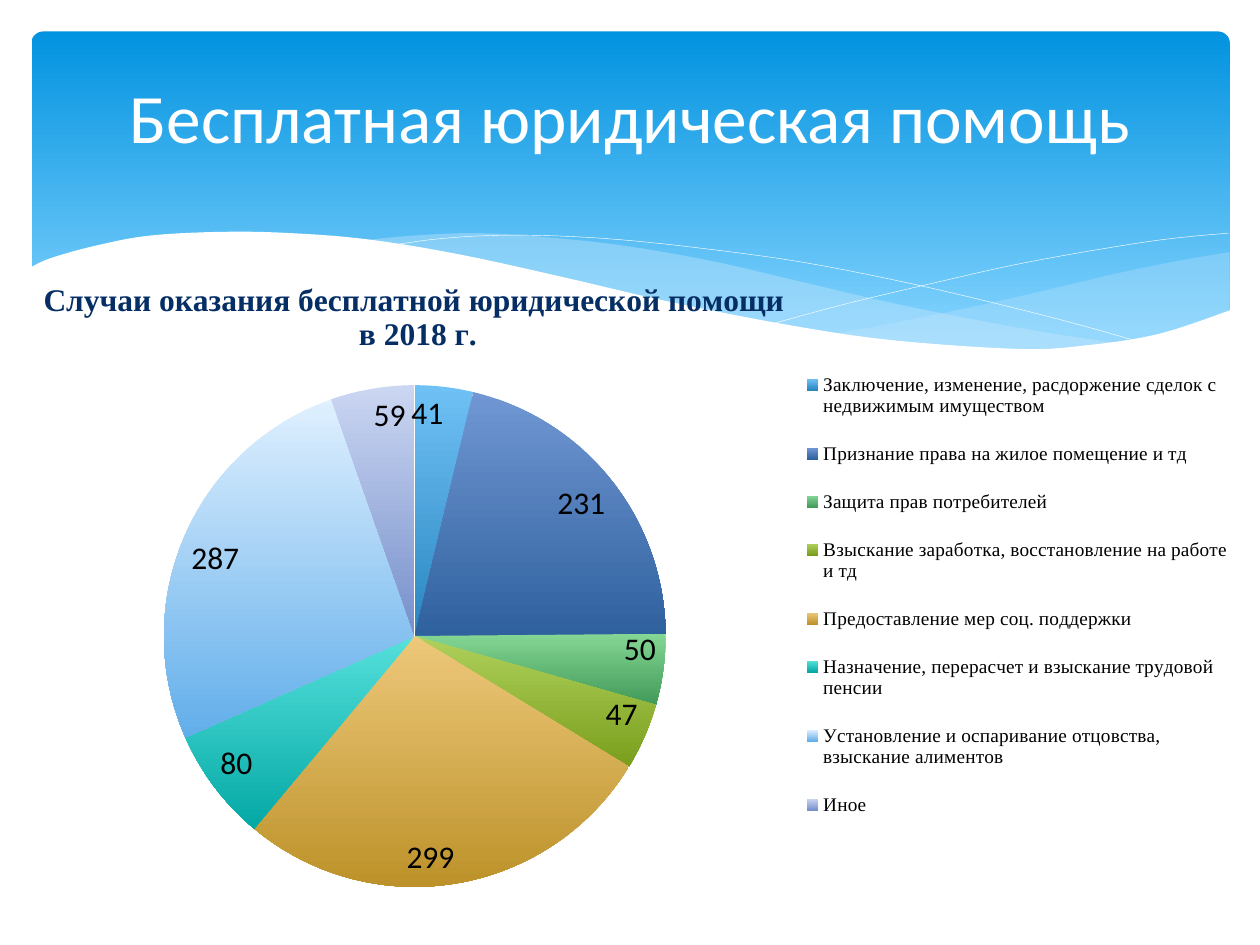
from lxml import etree
from pptx import Presentation
from pptx import util as u
from pptx.chart.data import CategoryChartData
from pptx.dml.color import RGBColor
from pptx.enum import chart as ch, shapes, text
from pptx.oxml import ns

TITLE = "Бесплатная юридическая помощь"
CHART_TITLE = ["Случаи оказания бесплатной юридической помощи ", "в 2018 г."]
# category, number of cases, top and bottom colour of the slice
CASES = [
    ("Заключение, изменение, расдоржение сделок с недвижимым имуществом", 41, "6FC1F5", "2A86C0"),
    ("Признание права на жилое помещение и тд", 231, "7097D3", "2F619E"),
    ("Защита прав потребителей", 50, "84D694", "429A59"),
    ("Взыскание заработка, восстановление на работе и тд", 47, "AFD15C", "7A9E1C"),
    ("Предоставление мер соц. поддержки", 299, "EDC87A", "BD922A"),
    ("Назначение, перерасчет и взыскание трудовой пенсии", 80, "55E0DB", "04A8A5"),
    ("Установление и оспаривание отцовства, взыскание алиментов", 287, "DFF0FF", "62AEEA"),
    ("Иное", 59, "CBD6F2", "7690CB"),
]

# Curve knots in inches from the corner of the wave box
RIGHT_WAVE = [
    [(9.53, .16), (9.12, .23), (8.68, .32), (8.38, .39), (7.56, .58), (6.83, .73), (6.38, .81)],
    [(6.38, .81), (6.82, .87), (7.46, .92), (8.01, .93), (8.58, .9), (9.05, .79), (9.53, .63)],
]
MIDDLE_WAVE = [
    [(8.7, .89), (8.14, .81), (7.52, .7), (6.83, .56), (6.06, .38), (5.46, .24), (4.79, .12),
     (4.19, .05), (3.57, .01), (3.05, .03), (2.63, .07)],
    [(2.63, .07), (3.19, .15), (3.81, .27), (4.26, .38), (5.07, .56), (5.78, .71), (6.42, .82),
     (6.99, .9), (7.5, .93), (8.05, .94), (8.44, .92), (8.7, .89)],
]
FALLING_LINE = [[(2.86, .11), (3.21, .06), (3.64, .03), (4.1, .03), (4.66, .06), (5.33, .13),
                 (6.13, .24), (7.04, .42), (8.08, .67), (8.84, .88)]]
RISING_LINE = [[(5.9, .73), (6.49, .57), (7.25, .39), (7.83, .26), (8.43, .15), (9.01, .06),
                (9.52, .01)]]
WHITE_WAVE = [
    [(9.54, .62), (8.97, .81), (8.4, .9), (7.86, .93), (6.85, .86), (6.03, .74), (5.06, .55),
     (4.24, .36), (3.42, .18), (2.69, .06), (2.07, .01), (1.54, 0), (.96, .03), (.53, .11),
     (.17, .21), (0, .29)],
    [(0, 1.45), (9.54, 1.45)],
]


def rgb(value):
    return RGBColor.from_string(value)


def fill_gradient(fill, top, bottom, end=1.0):
    fill.gradient()
    fill.gradient_angle = 270
    for stop, color, position in zip(fill.gradient_stops, (top, bottom), (0, end)):
        stop.color.rgb = rgb(color)
        stop.position = position


def set_font(font, name, size, color, bold=False):
    font.name, font.size, font.bold = name, u.Pt(size), bold
    font.color.rgb = rgb(color)


def smooth_curve(knots, steps=5):
    """Points of a Catmull-Rom curve through the knots."""
    if len(knots) < 3:
        return knots
    padded = [knots[0], *knots, knots[-1]]
    points = [knots[0]]
    for a, b, c, d in zip(padded, padded[1:], padded[2:], padded[3:]):
        for i in range(1, steps + 1):
            t = i / steps
            points.append(tuple(
                (2 * q + (r - p) * t + (2 * p - 5 * q + 4 * r - s) * t ** 2
                 + (3 * q - p - 3 * r + s) * t ** 3) / 2
                for p, q, r, s in zip(a, b, c, d)))
    return points


def add_wave(slide, box, edges, fill=None, alpha=100):
    """Filled wave, or a thin white line when no fill is given."""
    points = [(u.Inches(box[0] + x), u.Inches(box[1] + y))
              for edge in edges for x, y in smooth_curve(edge)]
    builder = slide.shapes.build_freeform(*points[0])
    builder.add_line_segments(points[1:], close=fill is not None)
    sp = builder.convert_to_shape()
    sp.shadow.inherit = False
    if fill is None:
        sp.fill.background()
        sp.line.color.rgb = rgb("FFFFFF")
        sp.line.width = u.Pt(0.25)
        return
    sp.line.fill.background()
    sp.fill.solid()
    sp.fill.fore_color.rgb = rgb(fill)
    if alpha < 100:
        color = sp.fill._xPr.find(".//" + ns.qn("a:srgbClr"))
        etree.SubElement(color, ns.qn("a:alpha"), val=str(alpha * 1000))


def add_header(slide, left, top, width, height):
    sp = slide.shapes.add_shape(shapes.MSO_SHAPE.ROUNDED_RECTANGLE,
                                *map(u.Inches, (left, top, width, height)))
    sp.adjustments[0] = 0.034
    sp.shadow.inherit = False
    sp.line.fill.background()
    fill_gradient(sp.fill, "0293E0", "83D3FE", 0.9)

    waves = left - 0.02, top + 1.59
    add_wave(slide, waves, RIGHT_WAVE, "C6E7FC", 29)
    add_wave(slide, waves, MIDDLE_WAVE, "C6E7FC", 40)
    add_wave(slide, waves, FALLING_LINE)
    add_wave(slide, waves, RISING_LINE)
    add_wave(slide, waves, WHITE_WAVE, "FFFFFF")


def set_layout(parent, index, inner=False, **values):
    """Place a chart part by fractions of the chart."""
    for old in parent.findall(ns.qn("c:layout")):
        parent.remove(old)
    layout = etree.Element(ns.qn("c:layout"))
    manual = etree.SubElement(layout, ns.qn("c:manualLayout"))
    settings = {"layoutTarget": "inner"} if inner else {}
    settings.update(xMode="edge", yMode="edge", **values)
    for name, value in settings.items():
        etree.SubElement(manual, ns.qn("c:" + name), val=str(value))
    parent.insert(index, layout)


def add_case_chart(slide, left, top, width, height):
    data = CategoryChartData()
    data.categories = [case[0] for case in CASES]
    data.add_series("Series 1", [case[1] for case in CASES])
    frame = slide.shapes.add_chart(ch.XL_CHART_TYPE.PIE,
                                   *map(u.Inches, (left, top, width, height)), data)
    chart = frame.chart
    set_font(chart.font, "Calibri", 18, "000000")

    tf = chart.chart_title.text_frame
    for i, line in enumerate(CHART_TITLE):
        p = tf.add_paragraph() if i else tf.paragraphs[0]
        r = p.add_run()
        r.text = line
        set_font(r.font, "Times New Roman", 18, "052E65", True)
    chart.chart_title.include_in_layout = False

    plot = chart.plots[0]
    plot.vary_by_categories = True
    plot.has_data_labels = True
    labels = plot.data_labels
    labels.show_value, labels.show_percentage = True, False
    labels.position = ch.XL_LABEL_POSITION.INSIDE_END
    set_font(labels.font, "Calibri", 18, "000000")
    for i, (_, _, light, dark) in enumerate(CASES):
        fmt = plot.series[0].points[i].format
        fill_gradient(fmt.fill, light, dark)
        fmt.line.fill.background()

    chart.has_legend = True
    legend = chart.legend
    legend.position = ch.XL_LEGEND_POSITION.RIGHT
    legend.include_in_layout = False
    set_font(legend.font, "Times New Roman", 11, "000000")

    set_layout(chart.chart_title._element, 1, x=0.02, y=0.02)
    set_layout(legend._element, 1, x=0.64, y=0.13, w=0.35, h=0.78)
    set_layout(chart._chartSpace.chart.plotArea, 0, True, x=0.12, y=0.19, w=0.41, h=0.79)


def format_title(slide, left, top, width, height):
    sp = slide.shapes.title
    sp.left, sp.top, sp.width, sp.height = map(u.Inches, (left, top, width, height))
    tf = sp.text_frame
    tf.word_wrap = True
    tf.vertical_anchor = text.MSO_ANCHOR.MIDDLE
    p = tf.paragraphs[0]
    p.alignment = text.PP_ALIGN.CENTER
    r = p.add_run()
    r.text = TITLE
    set_font(r.font, "Calibri", 39.6, "FFFFFF")
    slide.shapes._spTree.append(sp._element)  # bring to front


def main():
    prs = Presentation()
    prs.slide_width, prs.slide_height = u.Inches(10), u.Inches(7.5)
    slide = prs.slides.add_slide(prs.slide_layouts[5])
    add_header(slide, 0.25, 0.25, 9.51, 2.7)
    add_case_chart(slide, 0.12, 2.1, 9.76, 5.04)
    format_title(slide, 0.5, 0.37, 9, 1.1)
    prs.save("out.pptx")


if __name__ == "__main__":
    main()
